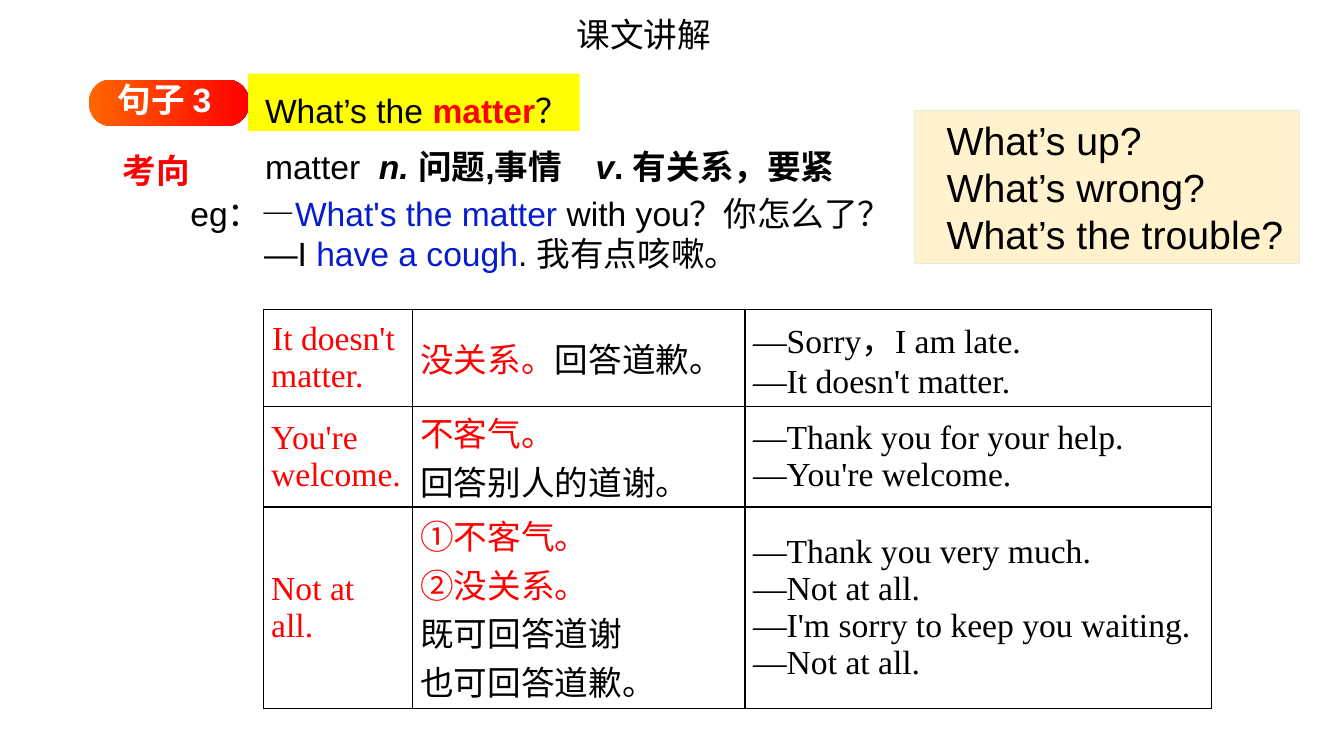
"""Build the lesson slide that explains the sentence "What's the matter?"."""
from lxml import etree
from pptx import Presentation
from pptx.dml.color import RGBColor
from pptx.enum.shapes import MSO_SHAPE
from pptx.enum.text import MSO_ANCHOR, MSO_AUTO_SIZE, PP_ALIGN
from pptx.oxml.ns import qn
from pptx.util import Inches, Pt

BLACK, RED, BLUE, WHITE = "000000", "FF0000", "051DCD", "FFFFFF"
SANS, SERIF = "Arial", "Times New Roman"

TITLE = [[("课文讲解", BLACK, "")]]
TOPIC = [[("考向", RED, "b")]]
BADGE = [[("句子 3", WHITE, "b")]]
SENTENCE = [[("What’s the ", BLACK, ""), ("matter", RED, "b"), ("？", BLACK, "")]]
MEANING = [[("matter ", BLACK, ""), (" n. ", BLACK, "bi"), ("问题,事情　", BLACK, "b"),
            ("v", BLACK, "bi"), (". 有关系，要紧", BLACK, "b")]]
EXAMPLE = [
    [("eg：—", BLACK, ""), ("What's the matter ", BLUE, ""), ("with you？你怎么了？", BLACK, "")],
    [("—I ", BLACK, ""), ("have a cough", BLUE, ""), (". 我有点咳嗽。", BLACK, "")],
]
SYNONYMS = [[(question, BLACK, "")] for question in
            ("What’s up?", "What’s wrong?", "What’s the trouble?")]

REPLIES = [
    (["It doesn't ", "matter."],
     [[("没关系。", RED, ""), ("回答道歉。", BLACK, "")]],
     ["—Sorry，I am late.", "—It doesn't matter."]),
    (["You're ", "welcome."],
     [[("不客气。", RED, "")], [("回答别人的道谢。", BLACK, "")]],
     ["—Thank you for your help.", "—You're welcome."]),
    (["Not at ", "all."],
     [[("①不客气。", RED, "")], [("②没关系。", RED, "")],
      [("既可回答道谢", BLACK, "")], [("也可回答道歉。", BLACK, "")]],
     ["—Thank you very much.", "—Not at all.",
      "—I'm sorry to keep you waiting.", "—Not at all."]),
]
COLUMN_WIDTHS = (1.48, 3.3, 4.63)
ROW_HEIGHTS = (0.96, 1, 2)


def color(value):
    return RGBColor.from_string(value)


def write(frame, paragraphs, size=24, font=SANS, align=PP_ALIGN.LEFT):
    frame.word_wrap = True
    for index, runs in enumerate(paragraphs):
        paragraph = frame.add_paragraph() if index else frame.paragraphs[0]
        paragraph.alignment = align
        for text, hue, style in runs:
            run = paragraph.add_run()
            run.text = text
            run.font.size, run.font.name = Pt(size), font
            run.font.color.rgb = color(hue)
            run.font.bold, run.font.italic = "b" in style, "i" in style


def add_text(slide, box, paragraphs, align=PP_ALIGN.LEFT):
    frame = slide.shapes.add_textbox(*map(Inches, box)).text_frame
    write(frame, paragraphs, align=align)
    return frame


def add_panel(slide, preset, box):
    panel = slide.shapes.add_shape(preset, *map(Inches, box))
    panel.shadow.inherit = False
    panel.line.fill.background()
    return panel


def fill_panel(panel, hue):
    panel.fill.solid()
    panel.fill.fore_color.rgb = color(hue)


def add_borders(cell):
    properties = cell._tc.get_or_add_tcPr()
    for position, side in enumerate(("a:lnL", "a:lnR", "a:lnT", "a:lnB")):
        border = etree.Element(qn(side), w=str(Pt(1)))
        solid = etree.SubElement(border, qn("a:solidFill"))
        etree.SubElement(solid, qn("a:srgbClr"), val=BLACK)
        properties.insert(position, border)


def add_replies(slide):
    table = slide.shapes.add_table(
        len(REPLIES), len(COLUMN_WIDTHS), Inches(2.61), Inches(3.07),
        Inches(sum(COLUMN_WIDTHS)), Inches(sum(ROW_HEIGHTS))).table
    table.first_row = table.horz_banding = False
    for column, width in zip(table.columns, COLUMN_WIDTHS):
        column.width = Inches(width)
    for row, height, (phrase, usage, dialogue) in zip(table.rows, ROW_HEIGHTS, REPLIES):
        row.height = Inches(height)
        contents = ([[(line, RED, "")] for line in phrase], usage,
                    [[(line, BLACK, "")] for line in dialogue])
        for cell, paragraphs in zip(row.cells, contents):
            cell.vertical_anchor = MSO_ANCHOR.MIDDLE
            cell.margin_left = cell.margin_right = Inches(0.08)
            cell.margin_top = cell.margin_bottom = 0
            cell.fill.background()
            add_borders(cell)
            write(cell.text_frame, paragraphs, font=SERIF, align=PP_ALIGN.JUSTIFY)
    table.cell(0, 0).text_frame.paragraphs[0].alignment = PP_ALIGN.CENTER


def main():
    presentation = Presentation()
    presentation.slide_width, presentation.slide_height = Inches(13.33), Inches(7.5)
    slide = presentation.slides.add_slide(presentation.slide_layouts[5])

    title = slide.shapes.title
    title.left, title.top, title.width, title.height = map(Inches, (5.62, 0.09, 2.7, 0.5))
    title.text_frame.auto_size = MSO_AUTO_SIZE.NONE
    title.text_frame.vertical_anchor = MSO_ANCHOR.TOP
    write(title.text_frame, TITLE)

    add_text(slide, (1.12, 1.44, 1.49, 0.5), TOPIC)

    badge = add_panel(slide, MSO_SHAPE.ROUNDED_RECTANGLE, (0.88, 0.79, 1.59, 0.46))
    badge.adjustments[0] = 0.48
    badge.fill.gradient()
    badge.fill.gradient_angle = 0
    for stop, hue in zip(badge.fill.gradient_stops, ("FF6600", RED)):
        stop.color.rgb = color(hue)
    fill_panel(add_panel(slide, MSO_SHAPE.RECTANGLE, (2.46, 0.73, 3.29, 0.57)), "FFFF00")
    add_text(slide, (1.07, 0.73, 1.55, 0.5), BADGE)
    sentence = add_text(slide, (2.53, 0.72, 3.38, 0.57), SENTENCE)
    sentence.paragraphs[0].line_spacing = 1.3

    add_replies(slide)

    example = add_text(slide, (1.79, 1.86, 8.39, 0.91), EXAMPLE, PP_ALIGN.JUSTIFY)
    example.paragraphs[1]._p.get_or_add_pPr().set("marL", str(Inches(0.73)))
    add_text(slide, (2.53, 1.4, 6.68, 0.5), MEANING)

    synonyms = add_panel(slide, MSO_SHAPE.RECTANGLE, (9.07, 1.1, 3.82, 1.51))
    fill_panel(synonyms, "FFF2CC")
    synonyms.line.color.rgb = color("E2F0D9")
    synonyms.line.width = Pt(0.75)
    write(synonyms.text_frame, SYNONYMS, size=28)
    for paragraph in synonyms.text_frame.paragraphs:
        paragraph._p.get_or_add_pPr().set("indent", str(Inches(0.22)))

    presentation.save("out.pptx")


if __name__ == "__main__":
    main()
